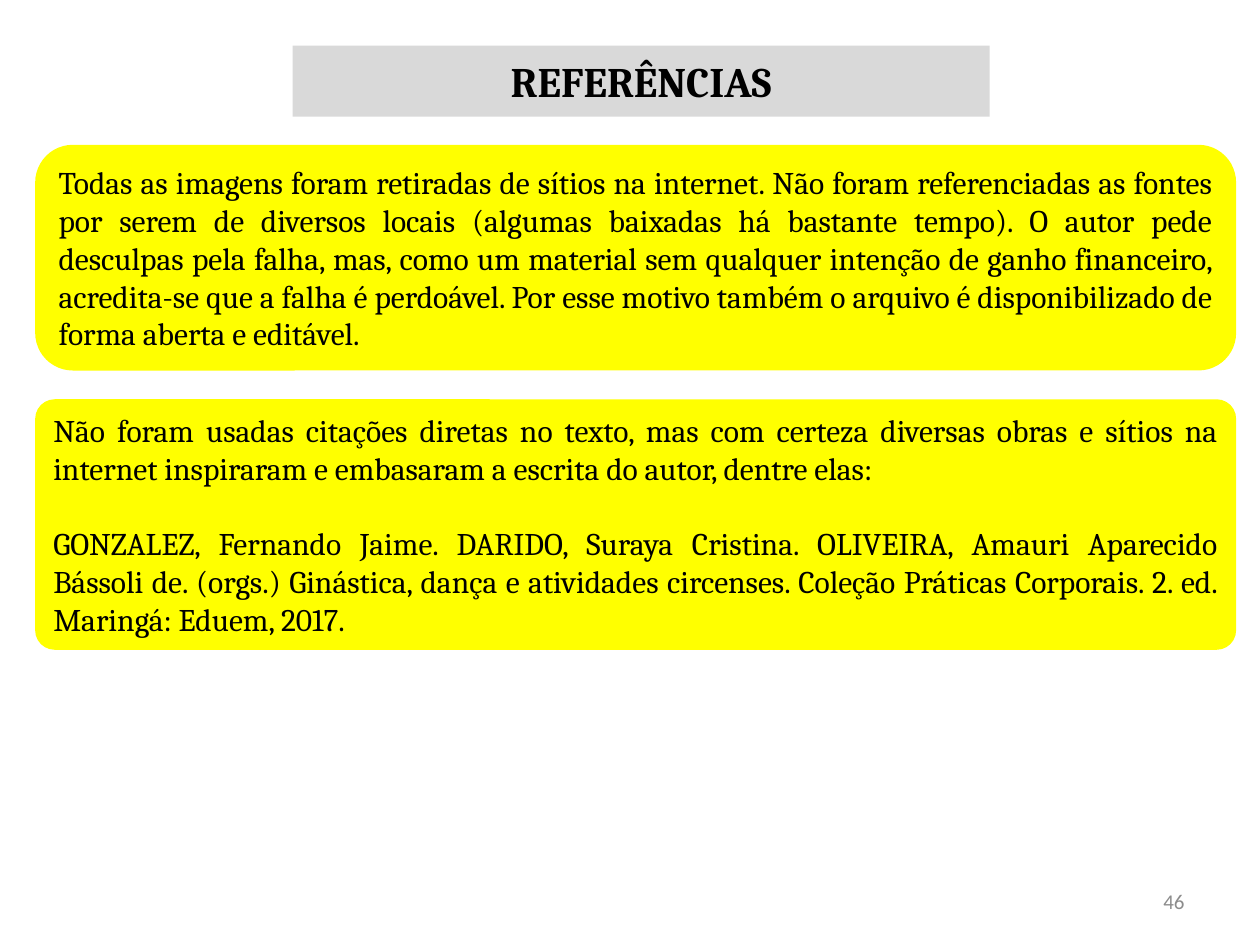
import pptx
import pptx.util
import pptx.dml.color
import pptx.enum.shapes
import pptx.enum.text
import lxml.etree
from pptx.util import Cm

# Content
TITLE = "REFERÊNCIAS"
PAGE = "46"
NOTES = [
    dict(top=2.92, high=4.55, curve=0.1667, text=[
        "Todas as imagens foram retiradas de sítios na internet. Não foram "
        "referenciadas as fontes por serem de diversos locais (algumas "
        "baixadas há bastante tempo). O autor pede desculpas pela falha, mas, "
        "como um material sem qualquer intenção de ganho financeiro, "
        "acredita-se que a falha é perdoável. Por esse motivo também o "
        "arquivo é disponibilizado de forma aberta e editável."]),
    dict(top=8.05, high=5.05, curve=0.078, text=[
        "Não foram usadas citações diretas no texto, mas com certeza diversas "
        "obras e sítios na internet inspiraram e embasaram a escrita do "
        "autor, dentre elas:",
        "GONZALEZ, Fernando Jaime. DARIDO, Suraya Cristina. OLIVEIRA, Amauri "
        "Aparecido Bássoli de. (orgs.) Ginástica, dança e atividades "
        "circenses. Coleção Práticas Corporais. 2. ed. Maringá: Eduem, 2017."]),
]
COLORS = {"title": "D9D9D9", "note": "FFFF00", "text": "000000", "page": "8C8C8C"}
LEFT, WIDE = 0.71, 24.21
GAP = 21.5  # one blank line between paragraphs, in points

ALIGN = pptx.enum.text.PP_ALIGN
ROUND = pptx.enum.shapes.MSO_SHAPE.ROUNDED_RECTANGLE


def color(name):
    return pptx.dml.color.RGBColor.from_string(COLORS[name])


def paint(shape, name):
    shape.fill.solid()
    shape.fill.fore_color.rgb = color(name)
    shape.line.fill.background()


def write(shape, texts, size=18, font="Cambria", ink="text", bold=False,
          align=ALIGN.JUSTIFY):
    frame = shape.text_frame
    frame.word_wrap = True
    frame.auto_size = pptx.enum.text.MSO_AUTO_SIZE.NONE
    frame.vertical_anchor = pptx.enum.text.MSO_ANCHOR.MIDDLE
    for i, text in enumerate(texts):
        para = frame.add_paragraph() if i else frame.paragraphs[0]
        if i:
            para.space_before = pptx.util.Pt(GAP)
        para.alignment = align
        run = para.add_run()
        run.text = text
        run.font.size = pptx.util.Pt(size)
        run.font.name = font
        run.font.bold = bold
        run.font.color.rgb = color(ink)


def main():
    deck = pptx.Presentation()
    deck.slide_width, deck.slide_height = Cm(25.4), Cm(19.05)
    slide = deck.slides.add_slide(deck.slide_layouts[5])

    # Title with rounded corners
    title = slide.shapes.title
    title.left, title.top = Cm(5.9), Cm(0.92)
    title.width, title.height = Cm(14.05), Cm(1.43)
    space = "{http://schemas.openxmlformats.org/drawingml/2006/main}"
    geom = lxml.etree.SubElement(title.element.spPr, space + "prstGeom",
                                 prst="roundRect")
    lxml.etree.SubElement(geom, space + "avLst")
    paint(title, "title")
    write(title, [TITLE], size=24, bold=True, align=ALIGN.CENTER)

    # Yellow notes
    for note in NOTES:
        box = slide.shapes.add_shape(ROUND, Cm(LEFT), Cm(note["top"]),
                                     Cm(WIDE), Cm(note["high"]))
        box.shadow.inherit = False
        box.adjustments[0] = note["curve"]
        paint(box, "note")
        write(box, note["text"])

    # Page number
    page = slide.shapes.add_textbox(Cm(18.2), Cm(17.66), Cm(5.93), Cm(1.01))
    write(page, [PAGE], size=12, font="Calibri", ink="page", align=ALIGN.RIGHT)

    deck.save("out.pptx")


if __name__ == "__main__":
    main()
